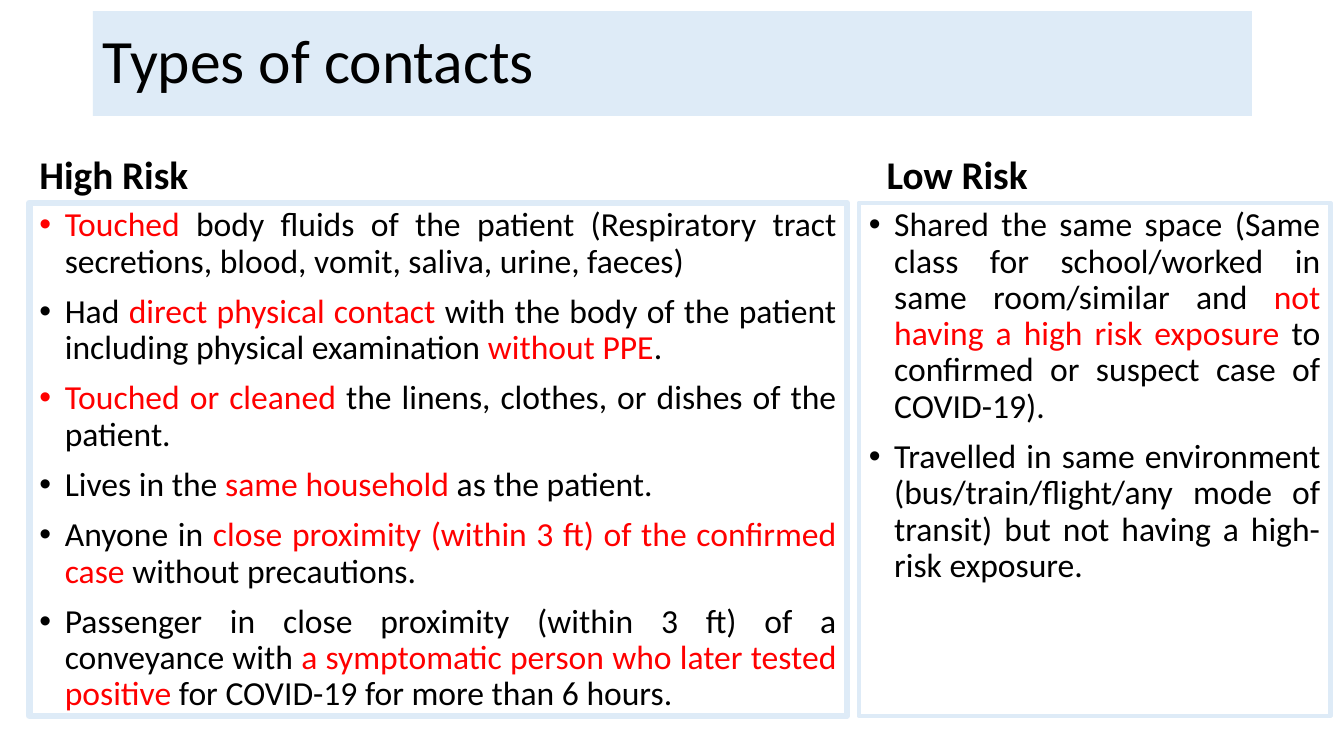
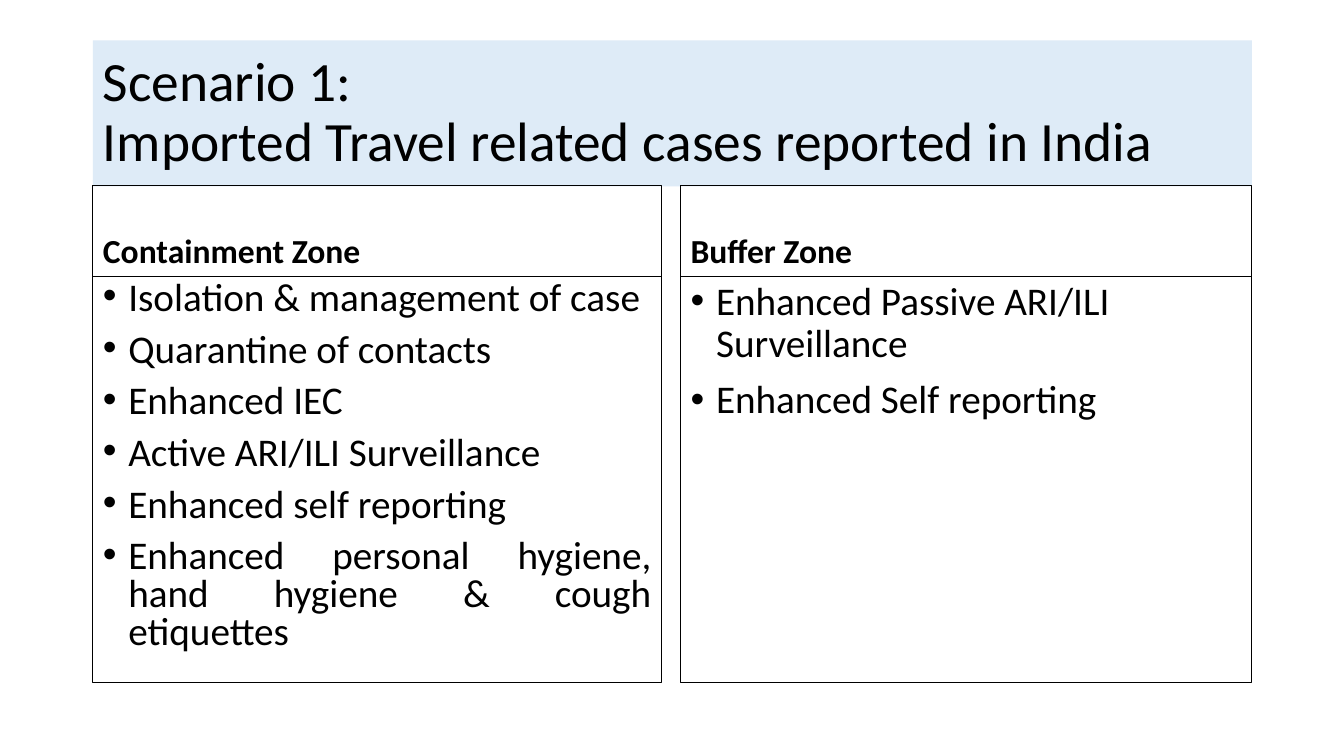
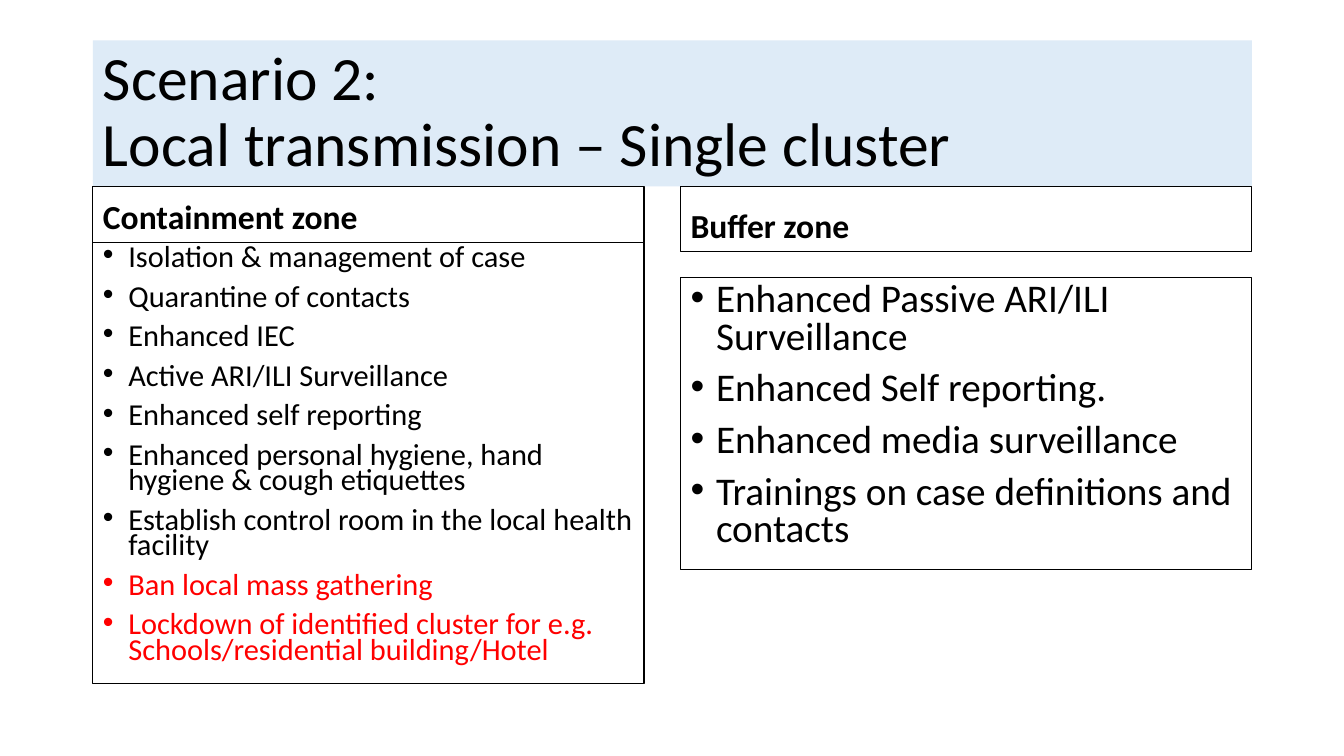
from dataclasses import dataclass

from lxml import etree
from pptx import Presentation
from pptx.dml.color import RGBColor
from pptx.enum.text import MSO_ANCHOR, MSO_AUTO_SIZE, PP_ALIGN
from pptx.oxml.ns import qn
from pptx.util import Cm, Pt

LEFT, JUSTIFY = PP_ALIGN.LEFT, PP_ALIGN.JUSTIFY
TOP, MIDDLE, BOTTOM = MSO_ANCHOR.TOP, MSO_ANCHOR.MIDDLE, MSO_ANCHOR.BOTTOM
NO_FIT = MSO_AUTO_SIZE.NONE

BLACK = RGBColor(0x00, 0x00, 0x00)
RED = RGBColor(0xFF, 0x00, 0x00)
PALE_BLUE = RGBColor(0xDE, 0xEB, 0xF7)
FONT = "Calibri"

COMPARISON_LAYOUT = 4
MARGIN = 2.34
TITLE_WIDTH = 29.21
BULLET_INDENT = Cm(0.64)
PARAGRAPH_GAP = Pt(10)
NEVER = 99


@dataclass
class Box:
    """A rectangle in centimetres."""
    left: float
    top: float
    width: float
    height: float


@dataclass
class Panel:
    """A heading over a bulleted list; asterisks enclose red words."""
    heading: str
    items: list
    heading_height: float = 2.29
    heading_size: float = 24
    heading_inset: float = 0
    heading_border: bool = True
    gap: float = 0
    size: float = 28
    spacing: float = 0.9
    justified_from: int = NEVER
    border: RGBColor = BLACK
    border_width: float = 0.75


def place(holder, box, anchor):
    holder.left, holder.top = Cm(box.left), Cm(box.top)
    holder.width, holder.height = Cm(box.width), Cm(box.height)
    holder.text_frame.vertical_anchor = anchor
    holder.text_frame.auto_size = NO_FIT
    holder.text_frame.word_wrap = True


def outline(holder, color, width):
    holder.line.color.rgb = color
    holder.line.width = Pt(width)


def format_span(span, size, color=BLACK, bold=False):
    span.font.name = FONT
    span.font.size = Pt(size)
    span.font.color.rgb = color
    span.font.bold = bold


def add_title(page, text, box, size):
    title = page.shapes.title
    place(title, box, MIDDLE)
    title.fill.solid()
    title.fill.fore_color.rgb = PALE_BLUE
    para = title.text_frame.paragraphs[0]
    para.text = text
    para.alignment = LEFT
    para.line_spacing = 0.9
    for span in para.runs:
        format_span(span, size)
    # Line breaks carry their own text size
    for line_break in para._p.findall(qn("a:br")):
        properties = etree.SubElement(line_break, qn("a:rPr"))
        properties.set("sz", str(round(size * 100)))


def add_heading(holder, panel, box):
    place(holder, box, BOTTOM)
    if panel.heading_border:
        outline(holder, panel.border, panel.border_width)
    para = holder.text_frame.paragraphs[0]
    para.text = panel.heading
    para.alignment = LEFT
    para.line_spacing = 0.9
    para.space_before = PARAGRAPH_GAP
    format_span(para.runs[0], panel.heading_size, bold=True)


def add_list(holder, panel, box):
    place(holder, box, TOP)
    outline(holder, panel.border, panel.border_width)
    frame = holder.text_frame
    for index, item in enumerate(panel.items):
        para = frame.add_paragraph() if index else frame.paragraphs[0]
        para.alignment = JUSTIFY if index >= panel.justified_from else LEFT
        para.line_spacing = panel.spacing
        para.space_before = PARAGRAPH_GAP
        properties = para._p.get_or_add_pPr()
        properties.set("marL", str(BULLET_INDENT))
        properties.set("indent", str(-BULLET_INDENT))
        # Every second part lies between asterisks
        for part_index, part in enumerate(item.split("*")):
            if part:
                span = para.add_run()
                span.text = part
                format_span(span, panel.size, RED if part_index % 2 else BLACK)


def add_panel(heading_holder, list_holder, panel, box):
    inset = panel.heading_inset
    add_heading(heading_holder, panel,
                Box(box.left + inset, box.top,
                    box.width - 2 * inset, panel.heading_height))
    list_offset = panel.heading_height + panel.gap
    add_list(list_holder, panel,
             Box(box.left, box.top + list_offset,
                 box.width, box.height - list_offset))


def add_comparison(deck, title, title_box, title_size, panels):
    page = deck.slides.add_slide(deck.slide_layouts[COMPARISON_LAYOUT])
    add_title(page, title, title_box, title_size)
    holders = {holder.placeholder_format.idx: holder
               for holder in page.placeholders}
    for first, (panel, box) in zip((1, 3), panels):
        add_panel(holders[first], holders[first + 1], panel, box)


def main():
    deck = Presentation()
    deck.slide_width, deck.slide_height = Cm(33.87), Cm(19.05)
    scenario_title = Box(MARGIN, 1.02, TITLE_WIDTH, 3.68)
    measures = [
        "Isolation & management of case",
        "Quarantine of contacts",
        "Enhanced IEC",
        "Active ARI/ILI Surveillance",
        "Enhanced self reporting",
        "Enhanced personal hygiene, hand hygiene & cough etiquettes",
    ]
    passive = "Enhanced Passive ARI/ILI Surveillance"

    # Types of contacts
    risk_style = dict(heading_size=28, heading_border=False, size=24,
                      justified_from=0, border=PALE_BLUE)
    high_risk = Panel("High Risk", [
        "*Touched* body fluids of the patient (Respiratory tract secretions, "
        "blood, vomit, saliva, urine, faeces)",
        "Had *direct physical contact* with the body of the patient including "
        "physical examination *without PPE*.",
        "*Touched or cleaned* the linens, clothes, or dishes of the patient.",
        "Lives in the *same household* as the patient.",
        "Anyone in *close proximity (within 3 ft) of the confirmed case* "
        "without precautions.",
        "Passenger in close proximity (within 3 ft) of a conveyance with "
        "*a symptomatic person who later tested positive* for COVID-19 for "
        "more than 6 hours.",
    ], border_width=4.5, **risk_style)
    low_risk = Panel("Low Risk", [
        "Shared the same space (Same class for school/worked in same "
        "room/similar and *not having a high risk exposure* to confirmed or "
        "suspect case of COVID-19).",
        "Travelled in same environment (bus/train/flight/any mode of transit) "
        "but not having a high-risk exposure.",
    ], heading_inset=0.45, border_width=3, **risk_style)
    add_comparison(deck, "Types of contacts",
                   Box(MARGIN, 0.28, TITLE_WIDTH, 2.64), 44,
                   [(high_risk, Box(0.74, 2.82, 20.6, 15.22)),
                    (low_risk, Box(21.64, 2.82, 11.89, 15.22))])

    # Scenario 1
    containment = Panel("Containment Zone", measures,
                        spacing=0.8, justified_from=5)
    buffer = Panel("Buffer Zone", [passive, "Enhanced Self reporting"],
                   justified_from=1)
    add_comparison(deck,
                   "Scenario 1:\nImported Travel related cases reported in India",
                   scenario_title, 39.6,
                   [(containment, Box(MARGIN, 4.67, 14.33, 12.53)),
                    (buffer, Box(17.15, 4.67, 14.4, 12.53))])

    # Scenario 2
    containment = Panel("Containment zone", measures + [
        "Establish control room in the local health facility",
        "*Ban local mass gathering*",
        "*Lockdown of identified cluster for e.g. "
        "Schools/residential building/Hotel*",
    ], heading_height=1.4, size=21.7, spacing=0.7)
    buffer = Panel("Buffer zone", [
        passive,
        "Enhanced Self reporting.",
        "Enhanced media surveillance",
        "Trainings on case definitions and contacts",
    ], heading_height=1.63, gap=0.66, spacing=0.8)
    add_comparison(deck, "Scenario 2:\nLocal transmission – Single cluster",
                   scenario_title, 44,
                   [(containment, Box(MARGIN, 4.7, 13.89, 12.52)),
                    (buffer, Box(17.15, 4.7, 14.4, 9.66))])

    deck.save("out.pptx")


if __name__ == "__main__":
    main()
